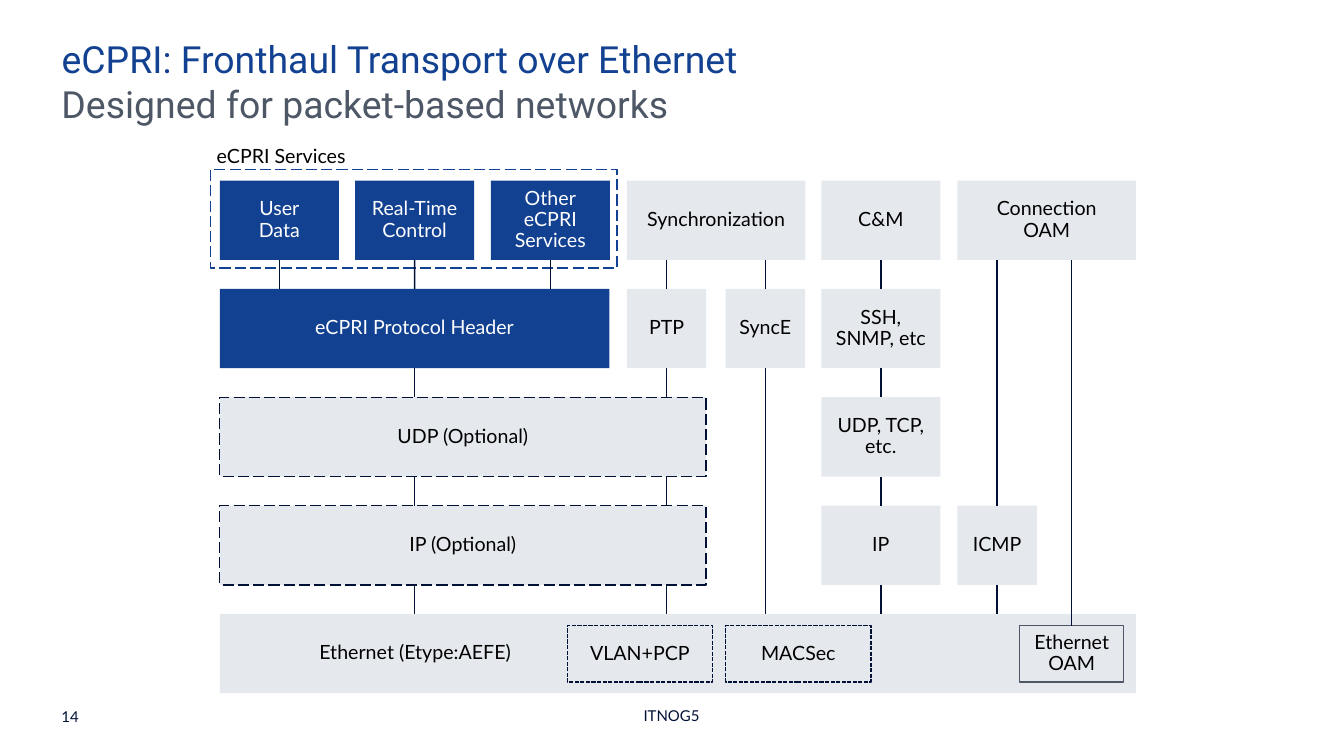
import pptx
import pptx.util
import pptx.dml.color
import pptx.enum.dml
import pptx.enum.shapes
import pptx.enum.text
from lxml import etree
from pptx.util import Cm

COLORS = {"blue": "124191", "gray": "E5E9ED", "navy": "001135",
          "slate": "4D5766", "white": "FFFFFF", "black": "000000"}
DASH = pptx.enum.dml.MSO_LINE
ALIGN = pptx.enum.text.PP_ALIGN
ANCHOR = pptx.enum.text.MSO_ANCHOR

ROW_TOP, ROW_PITCH, BOX_H = 4.55, 2.73, 2.0
ROWS = [ROW_TOP + i * ROW_PITCH for i in range(5)]
INNER_TOP, INNER_H = 15.77, 1.42
NARROW, MEDIUM, WIDE = 2.0, 3.0, 4.5
X_USER, X_CONTROL, X_OTHER = 5.54, 8.95, 12.37
X_PTP, X_SYNCE, X_CM, X_OAM = 15.8, 18.29, 20.7, 24.13


def rgb(name):
    return pptx.dml.color.RGBColor.from_string(COLORS[name])


def write(shape, text, color, size=14, font="Lato", align=ALIGN.CENTER,
          anchor=ANCHOR.MIDDLE, inset=0.2, wrap=True, before=0):
    tf = shape.text_frame
    tf.text = text
    tf.word_wrap = wrap
    tf.auto_size = pptx.enum.text.MSO_AUTO_SIZE.NONE
    tf.vertical_anchor = anchor
    tf.margin_left = tf.margin_right = Cm(inset)
    tf.margin_top = tf.margin_bottom = Cm(inset)
    for p in tf.paragraphs:
        p.alignment = align
        p.line_spacing = 0.9
        p.space_before = pptx.util.Pt(before)
        for r in p.runs:
            r.font.size = pptx.util.Pt(size)
            r.font.name = font
            r.font.color.rgb = rgb(color)


def add_label(s, text, x, y, w, h, color="black", **style):
    tb = s.shapes.add_textbox(Cm(x), Cm(y), Cm(w), Cm(h))
    write(tb, text, color, **style)


def add_box(s, text, x, y, w, h=BOX_H, fill="gray", line=None, dash=None):
    sp = s.shapes.add_shape(pptx.enum.shapes.MSO_SHAPE.RECTANGLE,
                            Cm(x), Cm(y), Cm(w), Cm(h))
    sp.shadow.inherit = False
    if fill:
        sp.fill.solid()
        sp.fill.fore_color.rgb = rgb(fill)
    else:
        sp.fill.background()
    if line:
        sp.line.color.rgb = rgb(line)
        sp.line.width = pptx.util.Pt(1)
        if dash:
            sp.line.dash_style = dash
    else:
        sp.line.fill.background()
    if text:
        write(sp, text, "white" if fill == "blue" else "black", wrap=False)
    return sp


def center(sp):
    return sp.left + sp.width // 2


def add_link(s, column, upper, lower):
    """Draw a vertical line below column's centre, joined where it meets a side's middle."""
    x = center(column)
    c = s.shapes.add_connector(pptx.enum.shapes.MSO_CONNECTOR.STRAIGHT,
                               x, upper.top + upper.height, x, lower.top)
    if abs(center(upper) - x) < Cm(0.03):
        c.begin_connect(upper, 2)
    if abs(center(lower) - x) < Cm(0.03):
        c.end_connect(lower, 0)
    c.line.color.rgb = rgb("navy")
    c.line.width = pptx.util.Pt(1)
    etree.SubElement(c._element.spPr, pptx.oxml.ns.qn("a:effectLst"))


def add_heading(s):
    style = {"size": 26.7, "font": "Roboto", "align": ALIGN.LEFT,
             "anchor": ANCHOR.TOP, "inset": 0, "before": 10}
    title = s.shapes.title
    title.left, title.top, title.width, title.height = Cm(1.55), Cm(1.04), Cm(30.78), Cm(1.14)
    write(title, "eCPRI: Fronthaul Transport over Ethernet", "blue", **style)
    add_label(s, "Designed for packet-based networks", 1.55, 2.18, 30.78, 1.14,
              "slate", **style)


def add_footer(s):
    add_label(s, "14", 1.55, 17.83, 0.94, 0.46, "navy", size=10.7,
              align=ALIGN.LEFT, anchor=ANCHOR.BOTTOM, inset=0)
    add_label(s, "ITNOG5", 8.53, 17.83, 16.79, 0.46, "navy", size=10.7, inset=0)


def add_stack(s):
    services, headers, transport, network, link = ROWS

    add_box(s, "", 5.31, 4.27, 10.24, 2.49, None, "blue", DASH.LONG_DASH)
    add_label(s, "eCPRI Services", 5.26, 3.56, 5.66, 0.79, align=ALIGN.LEFT)
    user = add_box(s, "User\nData", X_USER, services, MEDIUM, fill="blue")
    control = add_box(s, "Real-Time\nControl", X_CONTROL, services, MEDIUM, fill="blue")
    other = add_box(s, "Other\neCPRI\nServices", X_OTHER, services, MEDIUM, fill="blue")
    sync = add_box(s, "Synchronization", X_PTP, services, WIDE)
    cm = add_box(s, "C&M", X_CM, services, MEDIUM)
    oam = add_box(s, "Connection\nOAM", X_OAM, services, WIDE)

    header = add_box(s, "eCPRI Protocol Header", X_USER, headers, 9.82, fill="blue")
    ptp = add_box(s, "PTP", X_PTP, headers, NARROW)
    synce = add_box(s, "SyncE", X_SYNCE, headers, NARROW)
    ssh = add_box(s, "SSH,\nSNMP, etc", X_CM, headers, MEDIUM)

    udp, ip = [add_box(s, text, X_USER, y, 12.25, line="navy", dash=DASH.LONG_DASH)
               for text, y in (("UDP (Optional)", transport), ("IP (Optional)", network))]
    tcp = add_box(s, "UDP, TCP,\netc.", X_CM, transport, MEDIUM)
    cm_ip = add_box(s, "IP", X_CM, network, MEDIUM)
    icmp = add_box(s, "ICMP", X_OAM, network, NARROW)

    ethernet = add_box(s, "", X_USER, link, 23.09)
    add_label(s, "Ethernet (Etype:AEFE)", 7.29, 15.62, 6.35, 1.7)
    for text, x in (("VLAN+PCP", 14.3), ("MACSec", X_SYNCE)):
        add_box(s, text, x, INNER_TOP, 3.66, INNER_H, line="navy", dash=DASH.SQUARE_DOT)
    eth_oam = add_box(s, "Ethernet\nOAM", 25.7, INNER_TOP, 2.62, INNER_H, line="slate")

    for service in (user, control, other):
        add_link(s, service, service, header)
    add_link(s, eth_oam, oam, eth_oam)
    chains = [
        (header, [header, udp, ip, ethernet]),
        (ptp, [sync, ptp, udp, ip, ethernet]),
        (synce, [sync, synce, ethernet]),
        (cm, [cm, ssh, tcp, cm_ip, ethernet]),
        (icmp, [oam, icmp, ethernet]),
    ]
    for column, layers in chains:
        for upper, lower in zip(layers, layers[1:]):
            add_link(s, column, upper, lower)


def main():
    prs = pptx.Presentation()
    prs.slide_width, prs.slide_height = Cm(33.87), Cm(19.05)
    s = prs.slides.add_slide(prs.slide_layouts[5])
    add_heading(s)
    add_stack(s)
    add_footer(s)
    prs.save("out.pptx")


if __name__ == "__main__":
    main()
